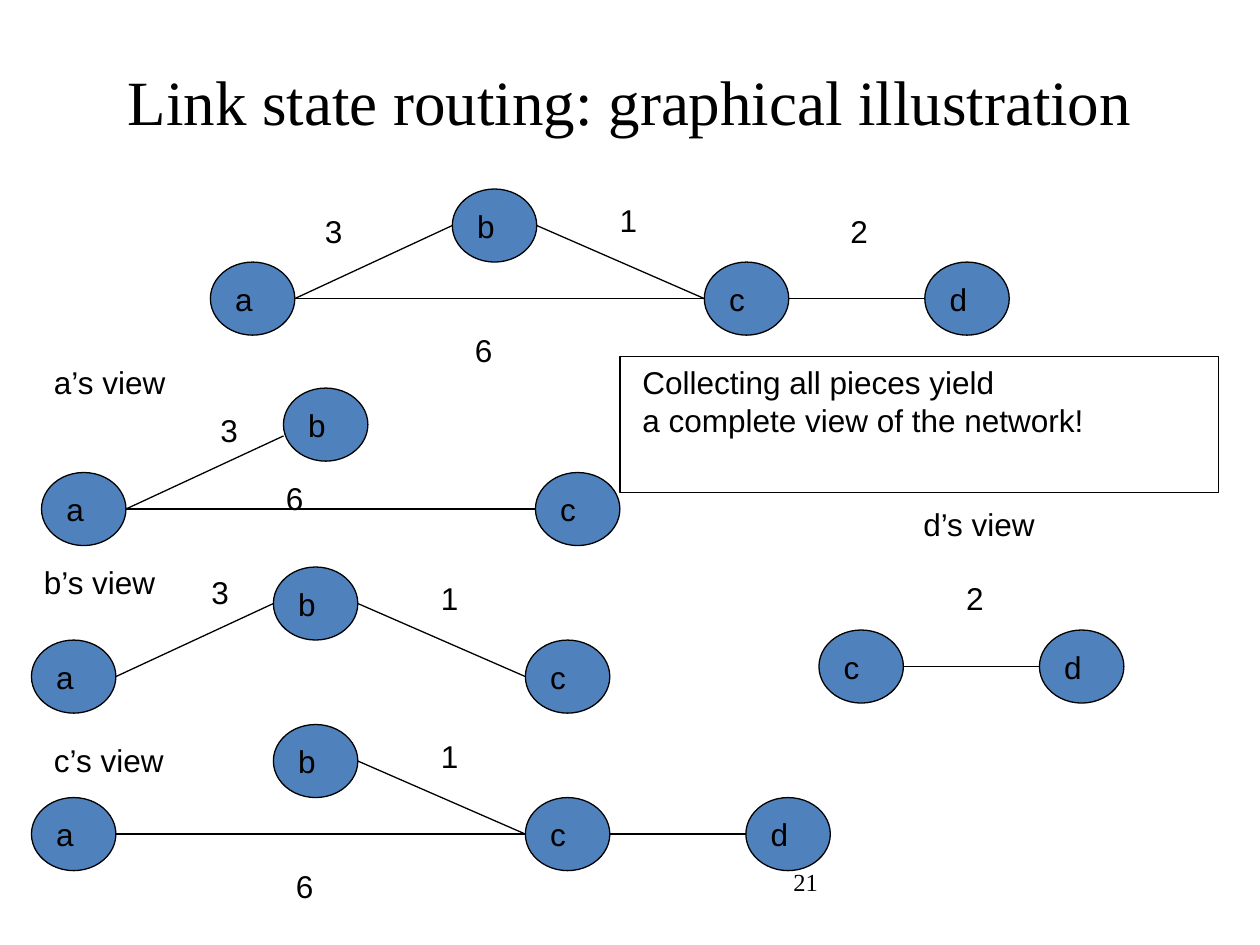
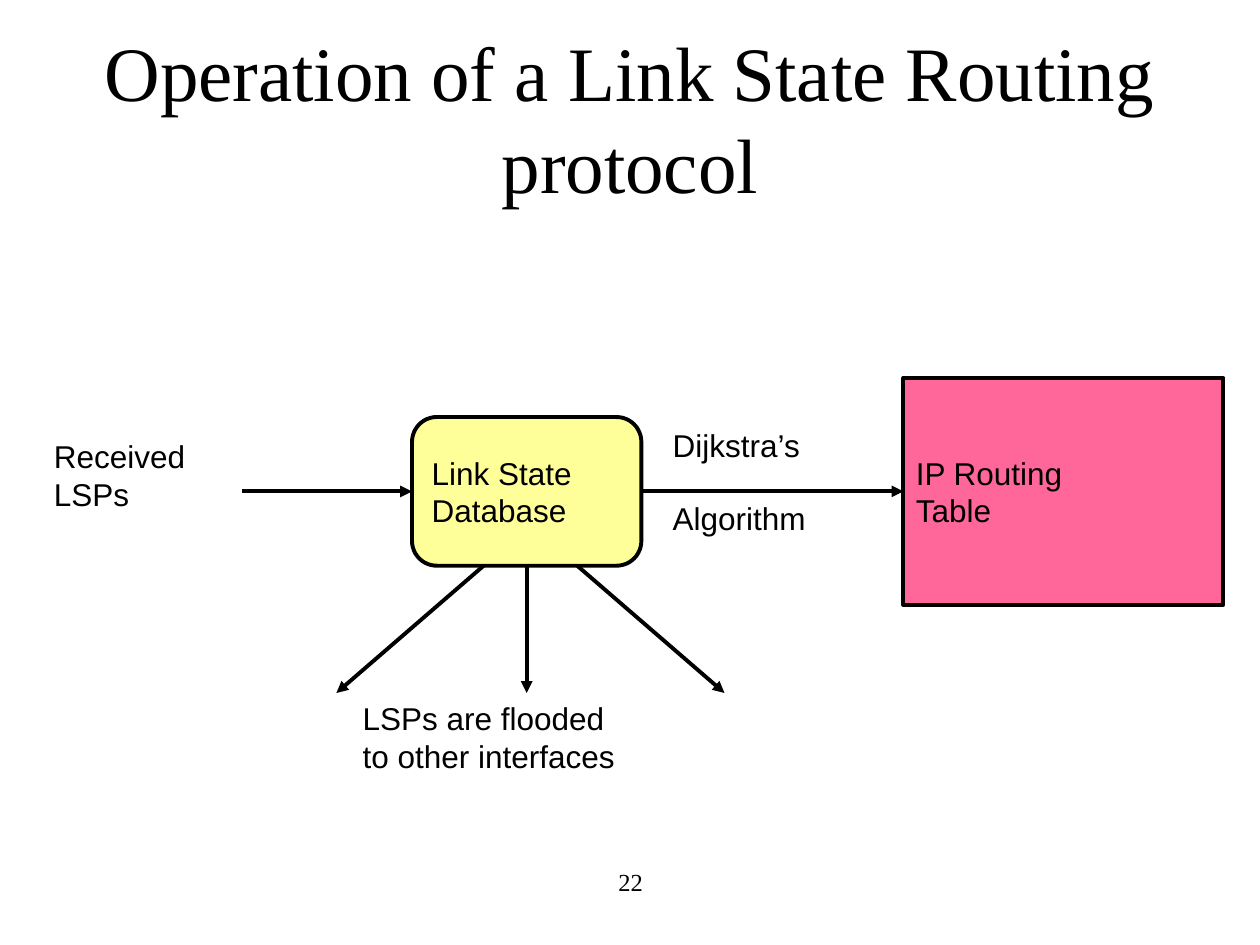
import pptx
import pptx.util
import pptx.dml.color
import pptx.enum.shapes
import pptx.enum.text
import pptx.oxml
import pptx.oxml.ns

Inches = pptx.util.Inches
SHAPE = pptx.enum.shapes.MSO_SHAPE
ANCHOR = pptx.enum.text.MSO_ANCHOR
ALIGN = pptx.enum.text.PP_ALIGN
FIT = pptx.enum.text.MSO_AUTO_SIZE

colours = {"ink": "000000", "node": "4F81BD", "database": "FFFF99", "table": "FF6699"}
label_font = {"name": "Arial", "size": pptx.util.Pt(18)}
number_font = {"name": "Times New Roman", "size": pptx.util.Pt(14)}
label_frame = {"word_wrap": False, "auto_size": FIT.SHAPE_TO_FIT_TEXT}
shape_frame = {"word_wrap": False, "vertical_anchor": ANCHOR.MIDDLE}
title_frame = {"word_wrap": True, "vertical_anchor": ANCHOR.MIDDLE}
number_frame = {"word_wrap": True}
left_para = {"alignment": ALIGN.LEFT}
spaced_para = {
    "alignment": ALIGN.LEFT,
    "space_before": pptx.util.Pt(10),
    "space_after": pptx.util.Pt(10),
}


def add_box(slide, at, lines, frame_format=label_frame, para_format=left_para,
            font_format=label_font, kind=None, fill=None, weight=0.75):
    place = [Inches(value) for value in at]
    if kind is None:
        box = slide.shapes.add_textbox(*place)
    else:
        box = slide.shapes.add_shape(kind, *place)
        box.shadow.inherit = False
        box.line.color.rgb = pptx.dml.color.RGBColor.from_string(colours["ink"])
        box.line.width = pptx.util.Pt(weight)
        if fill:
            box.fill.solid()
            box.fill.fore_color.rgb = pptx.dml.color.RGBColor.from_string(colours[fill])
        else:
            box.fill.background()
    for name, value in frame_format.items():
        setattr(box.text_frame, name, value)
    for index, line in enumerate(lines):
        para = box.text_frame.add_paragraph() if index else box.text_frame.paragraphs[0]
        para.text = line
        for name, value in para_format.items():
            setattr(para, name, value)
        for span in para.runs:
            for name, value in font_format.items():
                setattr(span.font, name, value)
            span.font.color.rgb = pptx.dml.color.RGBColor.from_string(colours["ink"])
    return box


def add_line(slide, start, end, weight=0.75, arrow=False):
    line = slide.shapes.add_connector(
        pptx.enum.shapes.MSO_CONNECTOR.STRAIGHT, *[Inches(value) for value in start + end])
    line.line.color.rgb = pptx.dml.color.RGBColor.from_string(colours["ink"])
    line.line.width = pptx.util.Pt(weight)
    if arrow:
        head = pptx.oxml.parse_xml(
            '<a:tailEnd xmlns:a="http://schemas.openxmlformats.org/drawingml/2006/main" type="triangle"/>')
        line.line._get_or_add_ln().append(head)
    line._element.spPr.append(pptx.oxml.parse_xml(
        '<a:effectLst xmlns:a="http://schemas.openxmlformats.org/drawingml/2006/main"/>'))
    return line


deck = pptx.Presentation()
deck.slide_width, deck.slide_height = Inches(10), Inches(7.5)

pages = []
for title, title_top, title_size, number, number_align in [
    ("Link state routing: graphical illustration", 0.17, 36, "21", ALIGN.RIGHT),
    ("Operation of a Link State Routing protocol", 0.3, 44, "22", ALIGN.CENTER),
]:
    page = deck.slides.add_slide(deck.slide_layouts[6])
    add_box(page, (3.42, 6.83, 3.17, 0.52), [number], number_frame,
            {"alignment": number_align}, number_font)
    add_box(page, (0.5, title_top, 9, 1.25), [title], title_frame, {"alignment": ALIGN.CENTER},
            {"name": "Times New Roman", "size": pptx.util.Pt(title_size)})
    pages.append(page)
views_page, operation_page = pages

node_width, node_height = 0.67, 0.58
node_offsets = {"a": (0, 0), "b": (1.92, -0.58), "c": (3.92, 0), "d": (5.67, 0)}
views = [
    {"origin": (1.67, 2.08), "nodes": "abcd", "links": ["ab", "bc", "cd", "ac"],
     "labels": [("3", 2.48, 1.63), ("1", 4.82, 1.55), ("6", 3.67, 2.58), ("2", 6.65, 1.63)]},
    {"origin": (0.33, 3.75), "nodes": "abc", "links": ["ab", "ac"], "b_lift": 0.09,
     "labels": [("3", 1.65, 3.21), ("6", 2.17, 3.75), ("a’s view", 0.33, 2.83)]},
    {"origin": (0.25, 5.08), "nodes": "abc", "links": ["ab", "bc"],
     "labels": [("3", 1.58, 4.5), ("1", 3.4, 4.55), ("b’s view", 0.25, 4.42)]},
    {"origin": (0.25, 6.33), "nodes": "abcd", "links": ["bc", "cd", "ac"],
     "labels": [("1", 3.4, 5.8), ("6", 2.25, 6.83), ("c’s view", 0.33, 5.83)]},
    {"origin": (2.58, 5), "nodes": "cd", "links": ["cd"],
     "labels": [("2", 7.57, 4.55), ("d’s view", 7.23, 3.96)]},
]
for view in views:
    left, top = view["origin"]
    places = {name: (left + node_offsets[name][0], top + node_offsets[name][1])
              for name in view["nodes"]}
    for first, second in view["links"]:
        add_line(views_page,
                 (places[first][0] + node_width, places[first][1] + node_height / 2),
                 (places[second][0], places[second][1] + node_height / 2))
    for name, (node_left, node_top) in places.items():
        lift = view.get("b_lift", 0) if name == "b" else 0
        add_box(views_page, (node_left, node_top - lift, node_width, node_height), [name],
                shape_frame, kind=SHAPE.OVAL, fill="node")
    for text, label_left, label_top in view["labels"]:
        label_width = 0.37 if len(text) == 1 else 1.33
        add_box(views_page, (label_left, label_top, label_width, 0.5), [text])

add_box(views_page, (5, 2.83, 4.52, 0.9),
        ["Collecting all pieces yield", "a complete view of the network!"])
add_box(views_page, (4.92, 2.83, 4.75, 1.08), [], kind=SHAPE.RECTANGLE)

routing_table = add_box(operation_page, (7.17, 3, 2.54, 1.8), ["IP Routing\vTable"],
                        shape_frame, spaced_para, kind=SHAPE.RECTANGLE, fill="table", weight=2.25)
for start, end in [((4.5, 4.42), (5.75, 5.5)), ((3.92, 4.42), (2.67, 5.5))]:
    add_line(operation_page, start, end, 2.25, True)
database = add_box(operation_page, (3.27, 3.31, 1.82, 1.18), ["Link State\vDatabase"],
                   shape_frame, spaced_para, kind=SHAPE.ROUNDED_RECTANGLE,
                   fill="database", weight=2.25)

received_arrow = add_line(operation_page, (1.92, 3.9), (3.27, 3.9), 2.25, True)
received_arrow.end_connect(database, 1)
algorithm_arrow = add_line(operation_page, (5.09, 3.9), (7.17, 3.9), 2.25, True)
algorithm_arrow.begin_connect(database, 3)
algorithm_arrow.end_connect(routing_table, 1)
flood_arrow = add_line(operation_page, (4.18, 4.49), (4.18, 5.5), 2.25, True)
flood_arrow.begin_connect(database, 2)

for at, lines in [
    ((0.33, 3.42, 1.25, 0.71), ["Received\vLSPs"]),
    ((5.24, 3.33, 1.61, 1.32), ["Dijkstra’s", "Algorithm"]),
    ((2.78, 5.5, 2.22, 0.71), ["LSPs are flooded\vto other interfaces"]),
]:
    add_box(operation_page, at, lines, para_format=spaced_para)

deck.save("out.pptx")
